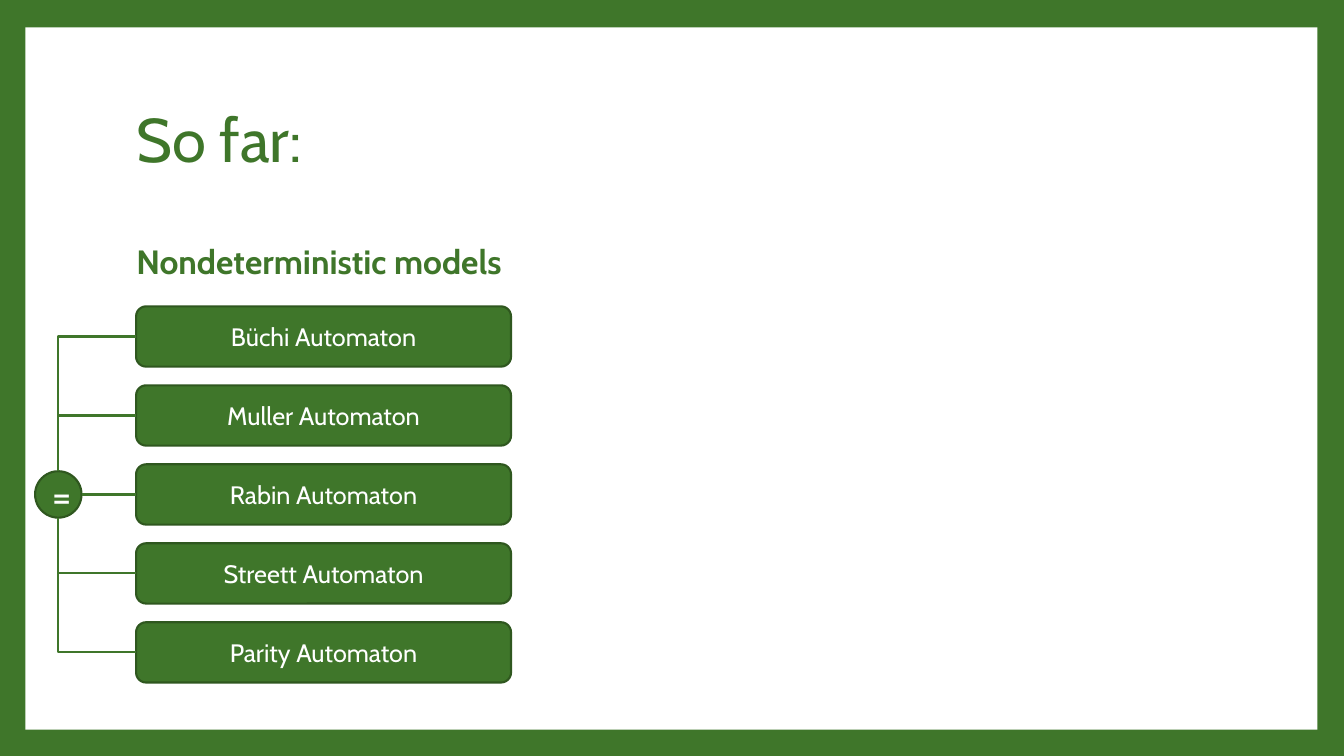
import pptx
import pptx.util
import pptx.dml.color
import pptx.enum.shapes
import pptx.enum.text
import lxml.etree
from pptx.util import Cm

GREEN = pptx.dml.color.RGBColor(0x3F, 0x76, 0x2A)
DARK_GREEN = pptx.dml.color.RGBColor(0x2F, 0x57, 0x1F)
WHITE = pptx.dml.color.RGBColor(0xFF, 0xFF, 0xFF)
FONT = "Cabin"
SHAPE = pptx.enum.shapes.MSO_SHAPE
CONNECTOR = pptx.enum.shapes.MSO_CONNECTOR
ALIGN = pptx.enum.text.PP_ALIGN
MIDDLE = pptx.enum.text.MSO_ANCHOR.MIDDLE

MODELS = ["Büchi", "Muller", "Rabin", "Streett", "Parity"]
MODEL_LEFT, MODEL_TOP = Cm(3.43), Cm(7.72)
MODEL_WIDTH, MODEL_HEIGHT = Cm(9.45), Cm(1.52)
MODEL_PITCH = Cm(1.99)
HUB_X, HUB_SIZE = Cm(1.47), Cm(1.17)


def write(frame, text, size, color, align, bold=False):
    frame.text = text
    frame.vertical_anchor = MIDDLE
    paragraph = frame.paragraphs[0]
    paragraph.alignment = align
    paragraph.font.name = FONT
    paragraph.font.size = pptx.util.Pt(size)
    paragraph.font.bold = bold
    paragraph.font.color.rgb = color
    return paragraph


def fill_placeholder(placeholder, text, size, box, bold=False):
    placeholder.left, placeholder.top, placeholder.width, placeholder.height = box
    frame = placeholder.text_frame
    frame.auto_size = pptx.enum.text.MSO_AUTO_SIZE.NONE
    paragraph = write(frame, text, size, GREEN, ALIGN.LEFT, bold)
    paragraph.line_spacing = 0.9
    return paragraph


def remove_bullet(paragraph):
    properties = paragraph._p.get_or_add_pPr()
    properties.set("marL", "0")
    properties.set("indent", "0")
    no_bullet = properties.makeelement(pptx.oxml.ns.qn("a:buNone"), {})
    properties.insert_element_before(no_bullet, "a:tabLst", "a:defRPr", "a:extLst")


def add_panel(slide):
    panel = slide.shapes.add_shape(SHAPE.RECTANGLE, Cm(0.64), Cm(0.69), Cm(32.56), Cm(17.7))
    panel.shadow.inherit = False
    panel.fill.solid()
    panel.fill.fore_color.rgb = WHITE
    panel.line.fill.background()
    slide.shapes._spTree.insert(2, panel._element)  # behind the placeholders


def add_node(shapes, kind, box, text, size):
    node = shapes.add_shape(kind, *box)
    node.shadow.inherit = False
    node.fill.solid()
    node.fill.fore_color.rgb = GREEN
    node.line.color.rgb = DARK_GREEN
    node.line.width = pptx.util.Pt(1.5)
    write(node.text_frame, text, size, WHITE, ALIGN.CENTER)


def add_link(shapes, start, end):
    bent = start[1] != end[1]
    link = shapes.add_connector(CONNECTOR.ELBOW if bent else CONNECTOR.STRAIGHT, *start, *end)
    link.line.color.rgb = GREEN
    link.line.width = pptx.util.Pt(1.5)
    properties = link._element.spPr
    if bent:  # a single corner
        properties.find(pptx.oxml.ns.qn("a:prstGeom")).set("prst", "bentConnector2")
    lxml.etree.SubElement(properties, pptx.oxml.ns.qn("a:effectLst"))


def main():
    deck = pptx.Presentation()
    deck.slide_width, deck.slide_height = Cm(33.87), Cm(19.05)
    slide = deck.slides.add_slide(deck.slide_layouts[1])

    # Green frame around a white panel
    slide.background.fill.solid()
    slide.background.fill.fore_color.rgb = GREEN
    add_panel(slide)

    # Headings
    fill_placeholder(slide.shapes.title, "So far:", 44,
                     (Cm(3.18), Cm(1.7), Cm(27.43), Cm(3.76)))
    models_heading = fill_placeholder(slide.placeholders[1], "Nondeterministic models", 24,
                                      (Cm(3.18), Cm(5.56), Cm(13.21), Cm(2.16)), bold=True)
    remove_bullet(models_heading)

    # Automaton models
    middles = []
    for row, model in enumerate(MODELS):
        top = MODEL_TOP + row * MODEL_PITCH
        middles.append(top + MODEL_HEIGHT // 2)
        add_node(slide.shapes, SHAPE.ROUNDED_RECTANGLE,
                 (MODEL_LEFT, top, MODEL_WIDTH, MODEL_HEIGHT), f"{model} Automaton", 18)

    # Equivalence hub linked to every model
    equivalence = slide.shapes.add_group_shape().shapes
    hub_y = middles[len(MODELS) // 2]
    radius = HUB_SIZE // 2
    add_node(equivalence, SHAPE.FLOWCHART_CONNECTOR,
             (HUB_X - radius, hub_y - radius, HUB_SIZE, HUB_SIZE), "=", 28)
    for middle in middles:
        if middle < hub_y:
            hub_point = (HUB_X, hub_y - radius)
        elif middle > hub_y:
            hub_point = (HUB_X, hub_y + radius)
        else:
            hub_point = (HUB_X + radius, hub_y)
        add_link(equivalence, (MODEL_LEFT, middle), hub_point)

    deck.save("out.pptx")


if __name__ == "__main__":
    main()
